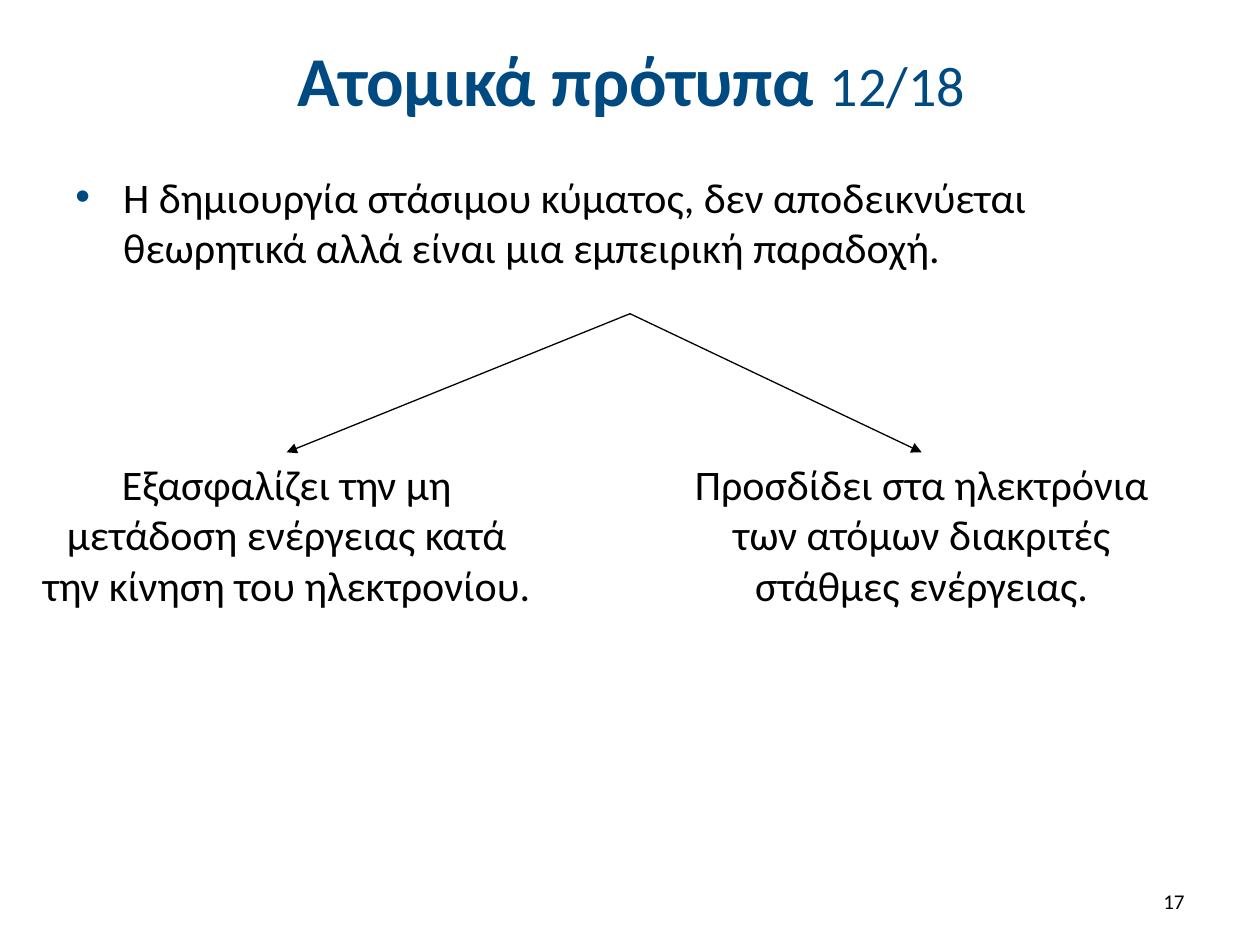
from lxml import etree
from pptx import Presentation
from pptx.dml.color import RGBColor
from pptx.enum.shapes import MSO_CONNECTOR
from pptx.enum.text import MSO_ANCHOR, PP_ALIGN
from pptx.oxml.ns import qn
from pptx.util import Inches, Pt

NAVY = RGBColor(0x00, 0x4A, 0x82)
BLACK = RGBColor(0x00, 0x00, 0x00)
LEFT, CENTER, RIGHT = PP_ALIGN.LEFT, PP_ALIGN.CENTER, PP_ALIGN.RIGHT
TOP, MIDDLE = MSO_ANCHOR.TOP, MSO_ANCHOR.MIDDLE
STRAIGHT = MSO_CONNECTOR.STRAIGHT
FONT = "Calibri"


def add_run(para, text, size=24, color=BLACK, bold=False):
    run = para.add_run()
    run.text = text
    font = run.font
    font.name, font.size, font.bold = FONT, Pt(size), bold
    font.color.rgb = color


def add_text(slide, box, text, align=LEFT, anchor=TOP, **style):
    frame = slide.shapes.add_textbox(*map(Inches, box)).text_frame
    frame.word_wrap = True
    frame.vertical_anchor = anchor
    para = frame.paragraphs[0]
    para.alignment = align
    add_run(para, text, **style)
    return para


def add_title(slide, box, text, part):
    para = add_text(slide, box, text, align=CENTER, anchor=MIDDLE,
                    size=40, color=NAVY, bold=True)
    add_run(para, part, size=32, color=NAVY)


def add_bullet(slide, box, text):
    props = add_text(slide, box, text)._p.get_or_add_pPr()
    indent = Inches(0.38)
    props.set("marL", str(indent))
    props.set("indent", str(-indent))
    color = etree.SubElement(props, qn("a:buClr"))
    etree.SubElement(color, qn("a:srgbClr")).set("val", str(NAVY))
    etree.SubElement(props, qn("a:buFont")).set("typeface", "Arial")
    etree.SubElement(props, qn("a:buChar")).set("char", "•")


def add_arrow(slide, start, end):
    arrow = slide.shapes.add_connector(STRAIGHT, *map(Inches, start + end))
    arrow.line.color.rgb = BLACK
    arrow.line.width = Pt(0.75)
    etree.SubElement(arrow.line._get_or_add_ln(), qn("a:tailEnd")).set("type", "triangle")
    etree.SubElement(arrow._element.spPr, qn("a:effectLst"))


def add_branch(slide, box, text, start):
    left, top, width, height = box
    add_arrow(slide, start, (left + width / 2, top))
    add_text(slide, box, text, align=CENTER)


def main():
    deck = Presentation()
    deck.slide_width, deck.slide_height = Inches(10), Inches(7.5)
    slide = deck.slides.add_slide(deck.slide_layouts[6])
    add_title(slide, (0.51, 0.13, 9, 0.99), "Ατομικά πρότυπα ", "12/18")
    add_bullet(slide, (0.5, 1.31, 9, 1.18),
               "Η δημιουργία στάσιμου κύματος, δεν αποδεικνύεται θεωρητικά "
               "αλλά είναι μια εμπειρική παραδοχή.")
    branches = (
        (0.2, "Εξασφαλίζει την μη μετάδοση ενέργειας κατά την κίνηση του ηλεκτρονίου."),
        (5.24, "Προσδίδει στα ηλεκτρόνια των ατόμων διακριτές στάθμες ενέργειας."),
    )
    for left, text in branches:
        add_branch(slide, (left, 3.59, 4.15, 1.31), text, (5, 2.49))
    add_text(slide, (7.17, 6.95, 2.33, 0.4), "17", align=RIGHT, anchor=MIDDLE, size=12)
    deck.save("out.pptx")


if __name__ == "__main__":
    main()
